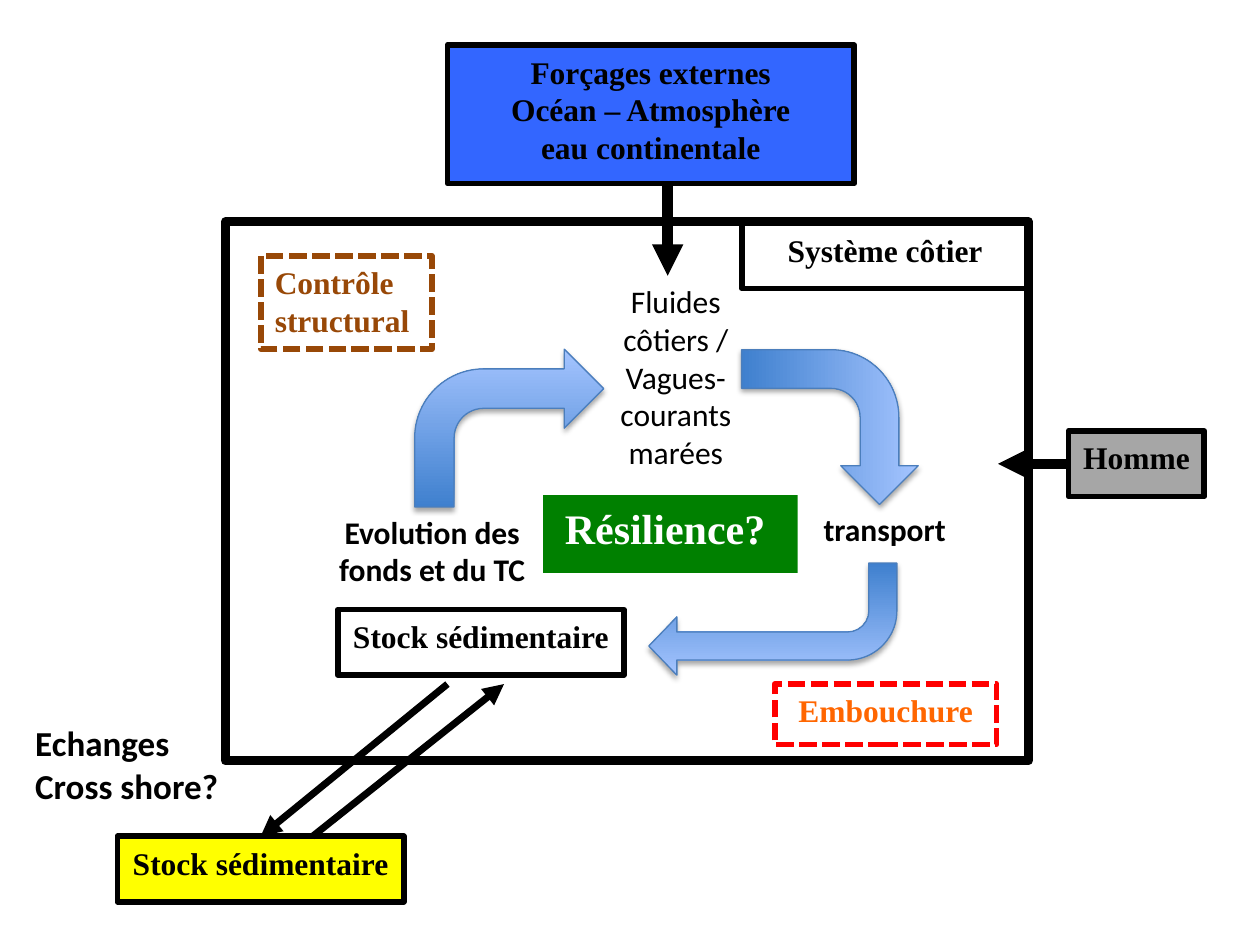
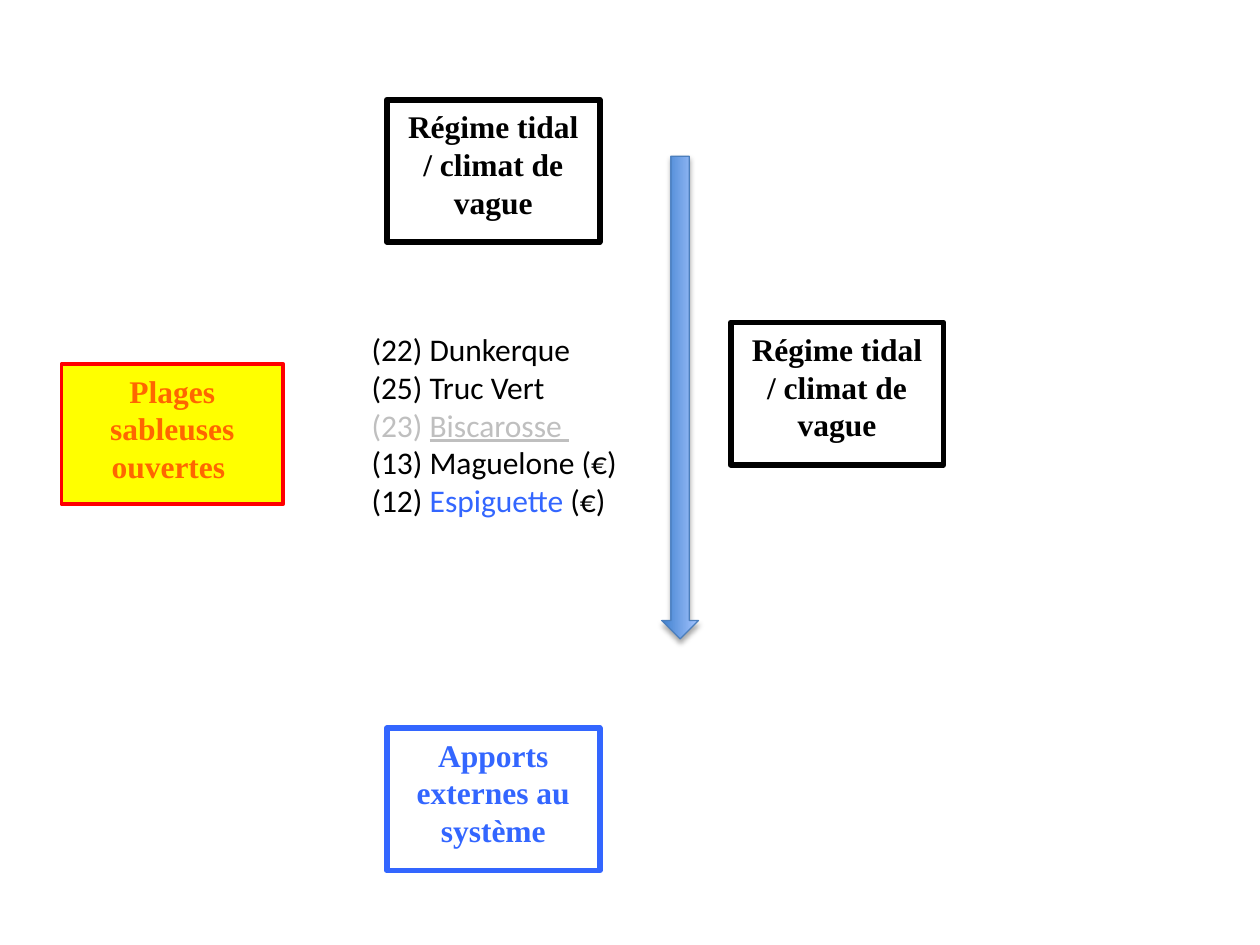
from lxml import etree
from pptx import Presentation
from pptx.dml.color import RGBColor
from pptx.enum.dml import MSO_LINE
from pptx.enum.shapes import MSO_CONNECTOR, MSO_SHAPE
from pptx.enum.text import MSO_ANCHOR, PP_ALIGN
from pptx.oxml.ns import qn
from pptx.util import Cm, Pt

RECT = MSO_SHAPE.RECTANGLE
BENT = MSO_SHAPE.BENT_ARROW
RIGHT = MSO_SHAPE.RIGHT_ARROW
LINE = MSO_CONNECTOR.STRAIGHT
DASH = MSO_LINE.SQUARE_DOT
TOP = MSO_ANCHOR.TOP
MID = PP_ALIGN.CENTER
LEFT = PP_ALIGN.LEFT

SERIF = "Times New Roman"
SANS = "Calibri"
BLACK = "000000"
WHITE = "FFFFFF"
BLUE = "3366FF"
RED = "FF0000"
ORANGE = "FF6600"
BROWN = "984807"
YELLOW = "FFFF00"
GRAY = "A6A6A6"
PALE = "BFBFBF"
GREEN = "008000"
DEEP = "3F80CE"
SKY = "A4C4FF"
EDGE = "4B7EBC"

STROKE = 3.3
STOCK = (5.77, 1.32)
REGIME = (4.29, 2.87)
CLIMATE = "Régime tidal\n/ climat de vague"


def rgb(code):
    return RGBColor.from_string(code)


def within(box, x, y, w=0, h=0):
    return box[0] + x, box[1] + y, w, h


def style(run, font, size, color, bold):
    run.font.name = font
    run.font.size = Pt(size)
    run.font.bold = bold
    run.font.color.rgb = rgb(color)


def write(frame, text, font, size, color, bold, align):
    frame.text = text
    for para in frame.paragraphs:
        para.alignment = align
        for run in para.runs:
            style(run, font, size, color, bold)


def block(slide, box, text="", color=BLACK, fill=None, edge=BLACK,
          width=STROKE, size=18, align=MID, dash=None):
    shape = slide.shapes.add_shape(RECT, *map(Cm, box))
    shape.shadow.inherit = False
    if fill:
        shape.fill.solid()
        shape.fill.fore_color.rgb = rgb(fill)
    else:
        shape.fill.background()
    if edge:
        shape.line.color.rgb = rgb(edge)
        shape.line.width = Pt(width)
        if dash:
            shape.line.dash_style = dash
    else:
        shape.line.fill.background()
    if text:
        frame = shape.text_frame
        frame.word_wrap = True
        frame.vertical_anchor = TOP
        frame.margin_left = frame.margin_right = Cm(0.28)
        frame.margin_top = frame.margin_bottom = Cm(0.15)
        write(frame, text, SERIF, size, color, True, align)
    return shape


def label(slide, box, text, size=18, bold=True, align=MID, wrap=True):
    frame = slide.shapes.add_textbox(*map(Cm, box)).text_frame
    frame.word_wrap = wrap
    write(frame, text, SANS, size, BLACK, bold, align)


def flow(slide, kind, box, turn=0, bends=()):
    shape = slide.shapes.add_shape(kind, *map(Cm, box))
    shape.rotation = turn
    for i, bend in enumerate(bends):
        shape.adjustments[i] = bend
    shape.fill.gradient()
    shape.fill.gradient_angle = 90
    for stop, color in zip(shape.fill.gradient_stops, (DEEP, SKY)):
        stop.color.rgb = rgb(color)
    shape.line.color.rgb = rgb(EDGE)
    shape.line.width = Pt(0.75)
    shape.shadow.inherit = False
    glow = etree.SubElement(
        shape._element.spPr.find(qn("a:effectLst")), qn("a:outerShdw"),
        blurRad=str(Pt(3.1)), dist=str(Pt(1.8)), dir="5400000",
        rotWithShape="0")
    tint = etree.SubElement(glow, qn("a:srgbClr"), val=BLACK)
    etree.SubElement(tint, qn("a:alpha"), val="35000")


def arrow(slide, start, end, width):
    line = slide.shapes.add_connector(LINE, *map(Cm, start[:2] + end[:2]))
    line.line.color.rgb = rgb(BLACK)
    line.line.width = Pt(width)
    props = line._element.spPr
    etree.SubElement(props.find(qn("a:ln")), qn("a:tailEnd"), type="triangle")
    etree.SubElement(props, qn("a:effectLst"))
    return line


def coast(slide, box):
    flow(slide, BENT, within(box, 3.81, 2.57, 3.81, 3.18))
    flow(slide, BENT, within(box, 10.62, 2.36, 3.12, 3.56), 90)
    flow(slide, BENT, within(box, 8.53, 6.88, 5, 2.26), 180,
         (0.25, 0.26, 0.25, 0.44))
    block(slide, box, width=5.25)
    block(slide, within(box, 0.71, 0.69, 3.45, 1.88), "Contrôle structural",
          BROWN, edge=BROWN, align=LEFT, dash=DASH)
    block(slide, within(box, 11.07, 9.32, 4.47, 1.22), "Embouchure",
          ORANGE, edge=RED, dash=DASH)
    label(slide, within(box, 1.75, 5.74, 4.83, 1.8),
          "Evolution des fonds et du TC")
    label(slide, within(box, 6.88, 1.09, 4.39, 4.11),
          "Fluides côtiers / Vagues-courants marées", bold=False)
    label(slide, within(box, 11.28, 5.69, 4.01, 1.02), "transport")
    block(slide, within(box, 6.4, 5.51, 5.13, 1.57), "Résilience? ",
          WHITE, GREEN, None, size=24)
    block(slide, within(box, box[2] - STOCK[0], 0.03, *STOCK),
          "Système côtier")
    block(slide, within(box, 2.26, 7.82, *STOCK), "Stock sédimentaire")


def force(slide, box):
    block(slide, box, "Forçages externes\nOcéan – Atmosphère\neau continentale",
          fill=BLUE)
    arrow(slide, within(box, 4.44, box[3]), within(box, 4.44, 4.65), 6)


def human(slide, box):
    shape = block(slide, box, "Homme", fill=GRAY)
    mid = box[3] / 2
    line = arrow(slide, within(box, 0, mid), within(box, -1.42, mid), 6)
    line.begin_connect(shape, 1)


def shore(slide, box):
    label(slide, within(box, 0, 0.64, 4.24, 1.96), "Echanges\nCross shore?",
          20, align=LEFT, wrap=False)
    base = box[3] - STOCK[1]
    stock = block(slide, within(box, 1.91, base, *STOCK),
                  "Stock sédimentaire", fill=YELLOW)
    down = arrow(slide, within(box, 8.56, 0),
                 within(box, 1.91 + STOCK[0] / 2, base), 4)
    down.end_connect(stock, 0)
    arrow(slide, within(box, 5.84, base), within(box, box[2], 0), 4)


def sites(slide, box):
    rows = (
        (("(22) Dunkerque", BLACK),),
        (("(25) Truc Vert", BLACK),),
        (("(23) ", PALE), ("Biscarosse ", PALE)),
        (("(13) Maguelone (€)", BLACK),),
        (("(12) ", BLACK), ("Espiguette ", BLUE), ("(€)", BLACK)),
    )
    frame = slide.shapes.add_textbox(*map(Cm, box)).text_frame
    frame.word_wrap = True
    for i, row in enumerate(rows):
        para = frame.add_paragraph() if i else frame.paragraphs[0]
        for text, color in row:
            run = para.add_run()
            run.text = text
            style(run, SANS, 18, color, False)
            if text.startswith("Biscarosse"):
                run.font.underline = True


def column(slide, box):
    block(slide, within(box, 0.56, 0, *REGIME), CLIMATE)
    sites(slide, within(box, 0, 4.52, box[2], 4.11))
    block(slide, within(box, 0.56, box[3] - REGIME[1], *REGIME),
          "Apports externes au système", BLUE, edge=BLUE)


def trend(slide, box):
    long, thick = box[3], 0.74
    flow(slide, RIGHT, within(box, (thick - long) / 2, (long - thick) / 2,
                              long, thick), 90)
    block(slide, within(box, box[2] - REGIME[0], 3.35, *REGIME), CLIMATE)


def main():
    deck = Presentation()
    deck.slide_width, deck.slide_height = Cm(25.4), Cm(19.05)
    blank = deck.slide_layouts[6]

    model = deck.slides.add_slide(blank)
    coast(model, (4.55, 4.47, 16.18, 10.87))
    force(model, (9.02, 0.91, 8.2, 2.79))
    human(model, (21.54, 8.69, 2.74, 1.32))
    shore(model, (0.46, 13.79, 9.7, 4.39))

    beach = deck.slides.add_slide(blank)
    block(beach, (1.24, 7.34, 4.47, 2.82), "Plages sableuses ouvertes ",
          ORANGE, YELLOW, RED, 2.25)
    column(beach, (7.24, 2.01, 6.1, 15.54))
    trend(beach, (13.34, 3.15, 5.68, 9.73))

    deck.save("out.pptx")


if __name__ == "__main__":
    main()
